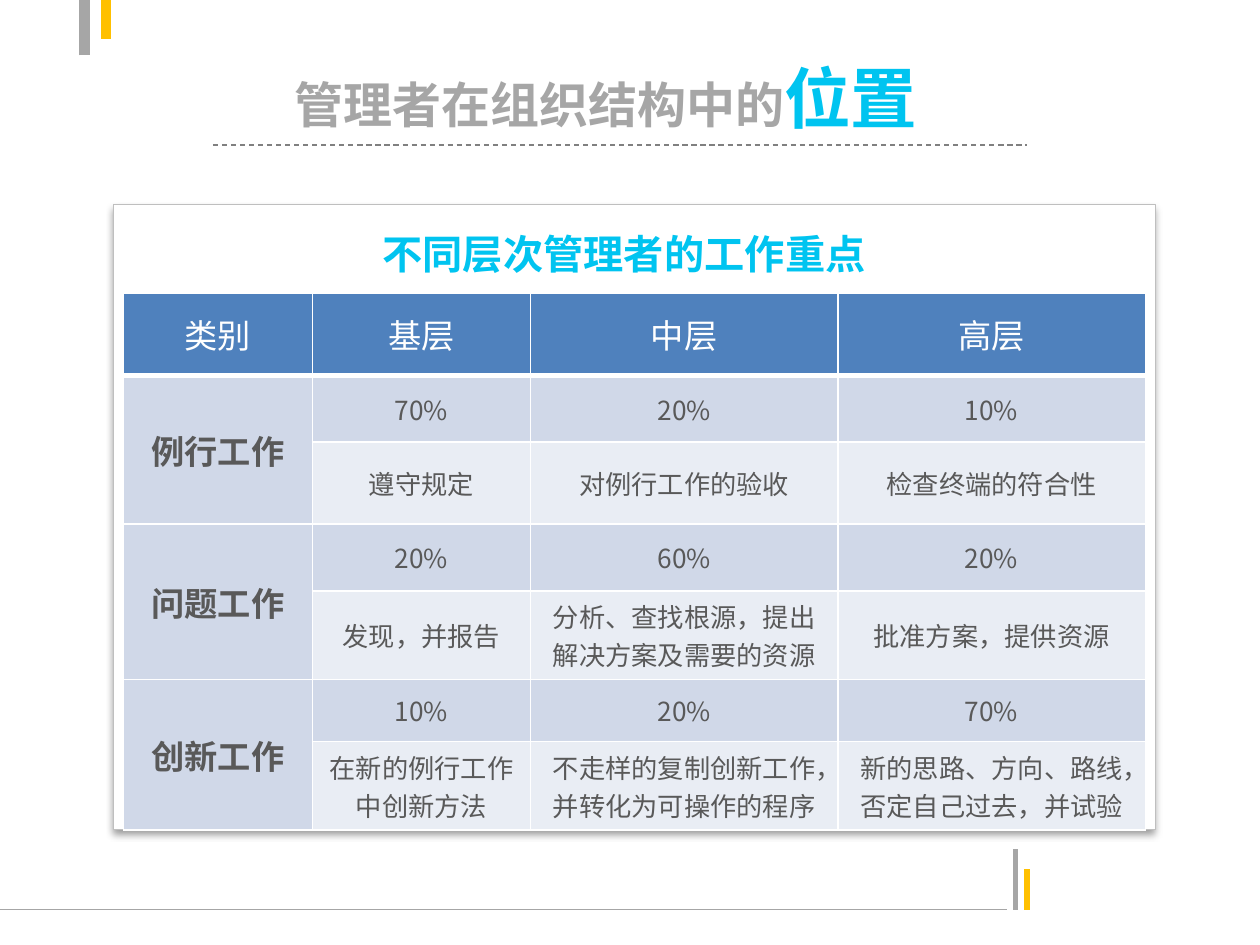
"""Build the slide on the work focus of managers at each level."""
import dataclasses

import lxml.etree
import pptx
import pptx.dml.color
import pptx.enum.dml
import pptx.enum.shapes
import pptx.enum.text
import pptx.oxml
import pptx.oxml.ns
import pptx.util

Inches = pptx.util.Inches
Pt = pptx.util.Pt
RGB = pptx.dml.color.RGBColor.from_string
qn = pptx.oxml.ns.qn
ALIGN = pptx.enum.text.PP_ALIGN
MIDDLE = pptx.enum.text.MSO_ANCHOR.MIDDLE


@dataclasses.dataclass(frozen=True)
class Theme:
    font: str = "Noto Sans CJK SC"
    latin: str = "Arial"
    grey: str = "A6A6A6"
    amber: str = "FFC000"
    rule: str = "808080"
    cyan: str = "00C4F0"
    white: str = "FFFFFF"
    card_edge: str = "BFBFBF"
    header: str = "4F81BD"
    band_dark: str = "D0D8E8"
    band_light: str = "E9EDF4"
    ink: str = "595959"
    title_size: int = 28
    accent_size: int = 38
    heading_size: int = 23
    label_size: int = 19
    body_size: int = 15


theme = Theme()


def write(frame, text, size, color, bold=False, font=theme.font, align=ALIGN.CENTER):
    paragraph = frame.paragraphs[0]
    paragraph.alignment = align
    run = paragraph.add_run()
    run.text = text
    run.font.size = Pt(size)
    run.font.bold = bold
    run.font.name = font
    run.font.color.rgb = RGB(color)
    east_asian = lxml.etree.SubElement(run.font._element, qn("a:ea"))
    east_asian.set("typeface", theme.font)


def border(cell, side, width):
    edge = lxml.etree.SubElement(cell._tc.get_or_add_tcPr(), qn(f"a:ln{side}"), w=str(Pt(width)))
    fill = lxml.etree.SubElement(edge, qn("a:solidFill"))
    lxml.etree.SubElement(fill, qn("a:srgbClr"), val=theme.white)


deck = pptx.Presentation()
deck.slide_width = Inches(10)
deck.slide_height = Inches(7.5)
slide = deck.slides.add_slide(deck.slide_layouts[5])

rules = [
    (0, 7.22, 7.99, 7.22, theme.grey, 0.75),
    (8.06, 7.22, 8.06, 6.74, theme.grey, 3),
    (8.15, 7.22, 8.15, 6.9, theme.amber, 3),
    (0.67, 0.44, 0.67, -0.03, theme.grey, 6),
    (0.84, 0, 0.84, 0.31, theme.amber, 6),
    (1.69, 1.15, 8.15, 1.15, theme.rule, 0.75),
]
for *ends, color, width in rules:
    rule = slide.shapes.add_connector(
        pptx.enum.shapes.MSO_CONNECTOR.STRAIGHT, *map(Inches, ends))
    rule.line.color.rgb = RGB(color)
    rule.line.width = Pt(width)
    if color == theme.rule:
        rule.line.dash_style = pptx.enum.dml.MSO_LINE.DASH
    lxml.etree.SubElement(rule._element.spPr, qn("a:effectLst"))

title = slide.shapes.title
title.left, title.top = Inches(2.24), Inches(0.52)
title.width, title.height = Inches(5.43), Inches(0.5)
title.text_frame.word_wrap = True
title.text_frame.auto_size = pptx.enum.text.MSO_AUTO_SIZE.NONE
title.text_frame.vertical_anchor = MIDDLE
write(title.text_frame, "管理者在组织结构中的", size=theme.title_size, color=theme.grey,
      bold=True, font=theme.latin, align=ALIGN.LEFT)
write(title.text_frame, "位置", size=theme.accent_size, color=theme.cyan,
      bold=True, align=ALIGN.LEFT)

card = slide.shapes.add_shape(pptx.enum.shapes.MSO_SHAPE.RECTANGLE,
                              Inches(0.9), Inches(1.62), Inches(8.27), Inches(4.96))
card.fill.solid()
card.fill.fore_color.rgb = RGB(theme.white)
card.line.color.rgb = RGB(theme.card_edge)
card.line.width = Pt(0.25)
card.shadow.inherit = False
card_shadow = lxml.etree.SubElement(
    card._element.spPr.find(qn("a:effectLst")), qn("a:outerShdw"),
    blurRad=str(Pt(4)), dist=str(Pt(3)), dir="5400000", algn="t", rotWithShape="0")
shadow_color = lxml.etree.SubElement(card_shadow, qn("a:srgbClr"), val="000000")
lxml.etree.SubElement(shadow_color, qn("a:alpha"), val="40000")

levels = ["类别", "基层", "中层", "高层"]
duties = [
    ("例行工作", ["70%", "20%", "10%"],
     ["遵守规定", "对例行工作的验收", "检查终端的符合性"]),
    ("问题工作", ["20%", "60%", "20%"],
     ["发现，并报告", "分析、查找根源，提出解决方案及需要的资源", "批准方案，提供资源"]),
    ("创新工作", ["10%", "20%", "70%"],
     ["在新的例行工作中创新方法", "不走样的复制创新工作，并转化为可操作的程序",
      "新的思路、方向、路线，否定自己过去，并试验"]),
]
rows = [levels]
for duty, shares, tasks in duties:
    rows += [[duty, *shares], ["", *tasks]]

column_widths = [1.5, 1.73, 2.44, 2.44]
row_heights = [0.65, 0.53, 0.65, 0.53, 0.65, 0.49, 0.65]
focus = slide.shapes.add_table(len(rows), len(levels), Inches(0.98), Inches(2.33),
                               Inches(sum(column_widths)), Inches(sum(row_heights))).table
focus.first_row = False
focus.horz_banding = False
for column, width in zip(focus.columns, column_widths):
    column.width = Inches(width)
for row, height in zip(focus.rows, row_heights):
    row.height = Inches(height)
for top in range(1, len(rows), 2):
    focus.cell(top, 0).merge(focus.cell(top + 1, 0))

for r, texts in enumerate(rows):
    for c, text in enumerate(texts):
        cell = focus.cell(r, c)
        for side in "LRTB":
            border(cell, side, width=3 if r == 0 and side == "B" else 1)
        if r == 0:
            fill, size, color = theme.header, theme.label_size, theme.white
        elif c == 0:
            fill, size, color = theme.band_dark, theme.label_size, theme.ink
        else:
            fill = theme.band_dark if r % 2 else theme.band_light
            size, color = theme.body_size, theme.ink
        cell.fill.solid()
        cell.fill.fore_color.rgb = RGB(fill)
        cell.vertical_anchor = MIDDLE
        if text:
            write(cell.text_frame, text, size=size, color=color, bold=r > 0 and c == 0)

heading = slide.shapes.add_textbox(Inches(2.86), Inches(1.77), Inches(4.19), Inches(0.49))
heading.text_frame.word_wrap = True
write(heading.text_frame, "不同层次管理者的工作重点", size=theme.heading_size,
      color=theme.cyan, bold=True)

deck.save("out.pptx")
